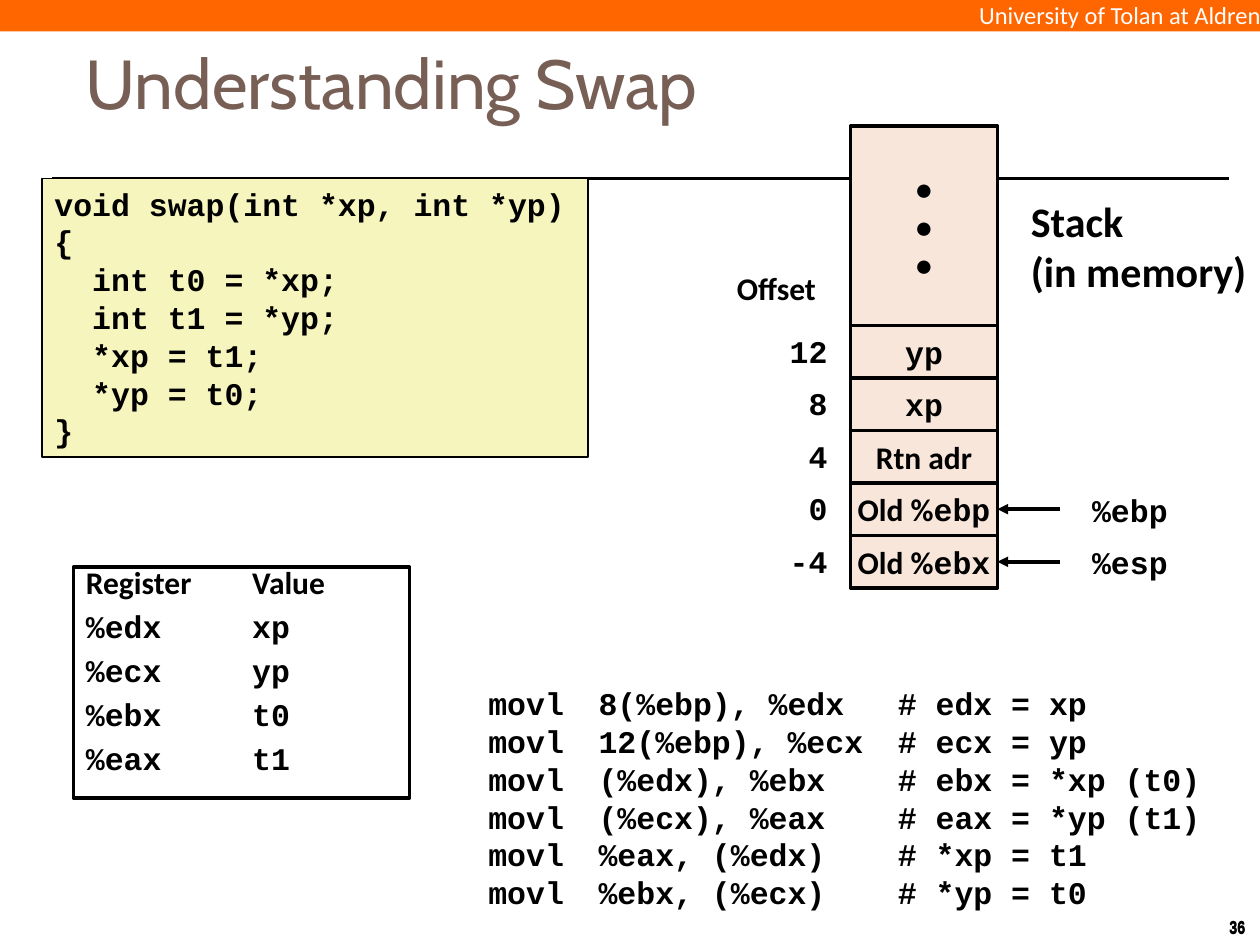
"""Build a slide that explains a swap function with its stack and registers."""
import dataclasses

import lxml.etree
import pptx
import pptx.dml.color
import pptx.enum.shapes
import pptx.enum.text
import pptx.oxml.ns
import pptx.util

Pt = pptx.util.Pt
qn = pptx.oxml.ns.qn
Align = pptx.enum.text.PP_ALIGN
Anchor = pptx.enum.text.MSO_ANCHOR


@dataclasses.dataclass(frozen=True)
class Theme:
    """Colours, faces and type sizes."""
    ink: str = "000000"
    paper: str = "FFFFFF"
    banner: str = "FF6600"
    title: str = "775F55"
    code: str = "F6F5BD"
    cell: str = "F8E6DA"
    sans: str = "Calibri"
    mono: str = "Courier New"
    head: str = "Cabin"
    narrow: str = "Arial Narrow"
    huge: float = 39.6
    large: float = 24
    body: float = 18
    small: float = 14
    tiny: float = 10


def rgb(color):
    """Turn a hex string into a colour."""
    return pptx.dml.color.RGBColor.from_string(color)


class Slide:
    """Draws styled elements on one slide."""

    def __init__(self, slide, theme):
        """Keep the slide and its theme."""
        self.shapes = slide.shapes
        self.theme = theme

    def label(self, shape, lines, face=None, size=None, color=None, bold=True,
              align=Align.LEFT, anchor=Anchor.TOP, wrap=False, tabs=(),
              indent=0, spacing=None, gap=0):
        """Fill a shape with paragraphs in one style."""
        frame = shape.text_frame
        frame.word_wrap = wrap
        frame.vertical_anchor = anchor
        for index, line in enumerate(lines):
            para = frame.add_paragraph() if index else frame.paragraphs[0]
            para.text = line.lstrip(" ")
            para.alignment = align
            props = para._p.get_or_add_pPr()
            if line.startswith(" "):
                props.set("marL", str(Pt(indent)))
            if spacing:
                para.line_spacing = spacing
            if gap and index:
                para.space_before = Pt(gap)
            if tabs:
                stops = lxml.etree.SubElement(props, qn("a:tabLst"))
                for stop in tabs:
                    lxml.etree.SubElement(stops, qn("a:tab"), pos=str(Pt(stop)), algn="l")
            font = para.font
            font.name = face or self.theme.mono
            font.size = Pt(size or self.theme.body)
            font.bold = bold
            font.color.rgb = rgb(color or self.theme.ink)
        return shape

    def text(self, box, lines, **style):
        """Add a text box."""
        return self.label(self.shapes.add_textbox(*map(Pt, box)), lines, **style)

    def rect(self, box, lines, fill=None, width=0, **style):
        """Add a rectangle with text."""
        kind = pptx.enum.shapes.MSO_SHAPE.RECTANGLE
        shape = self.shapes.add_shape(kind, *map(Pt, box))
        shape.shadow.inherit = False
        if fill:
            shape.fill.solid()
            shape.fill.fore_color.rgb = rgb(fill)
        else:
            shape.fill.background()
        if width:
            shape.line.color.rgb = rgb(self.theme.ink)
            shape.line.width = Pt(width)
        else:
            shape.line.fill.background()
        return self.label(shape, lines, **style)

    def cell(self, top, height, lines, face):
        """Add one stack cell."""
        return self.rect((486, top, 84, height), lines, self.theme.cell, 2,
                         face=face, align=Align.CENTER, anchor=Anchor.MIDDLE)

    def line(self, start, end, width, target=None):
        """Add a line, with an arrowhead when it has a target."""
        kind = pptx.enum.shapes.MSO_CONNECTOR.STRAIGHT
        line = self.shapes.add_connector(kind, *map(Pt, start + end))
        line.line.color.rgb = rgb(self.theme.ink)
        line.line.width = Pt(width)
        if target is not None:
            line.end_connect(target, 3)
            outline = line._element.spPr.find(qn("a:ln"))
            lxml.etree.SubElement(outline, qn("a:tailEnd"), type="triangle")
        lxml.etree.SubElement(line._element.spPr, qn("a:effectLst"))


def frame(page):
    """Draw the banner, title, rule and page number."""
    theme = page.theme
    banner = page.rect((0, 0, 720.5, 18), ["University of Tolan at Aldren"], theme.banner,
                       face=theme.sans, size=theme.small, color=theme.paper,
                       bold=False, align=Align.RIGHT)
    box = banner.text_frame
    box.margin_left = box.margin_right = box.margin_top = box.margin_bottom = 0
    page.line((30, 102), (702, 102), 1.5)
    for top in (520.5, 520):
        page.text((695.5, top, 24.5, 19.5), ["36"], face=theme.narrow, size=theme.tiny)
    page.text((42, 24, 502, 45), ["Understanding Swap"], face=theme.head,
              size=theme.huge, color=theme.title, bold=False,
              anchor=Anchor.MIDDLE, wrap=True)


def stack(page):
    """Draw the stack, its offsets and its pointers."""
    theme = page.theme
    page.text((582, 108, 139, 65.5), ["Stack", "(in memory)"], face=theme.sans, size=theme.large)
    page.text((414, 150, 60.5, 29), ["Offset"], face=theme.sans)
    page.cell(72, 114, ["•"] * 3, theme.sans)
    rows = [
        ("12", "yp", "", ""),
        ("8", "xp", "", ""),
        ("4", "", "Rtn adr", ""),
        ("0", "ebp", "Old %", "%ebp"),
        ("-4", "ebx", "Old %", "%esp"),
    ]
    step = 30
    for index, (offset, name, label, pointer) in enumerate(rows):
        top = 186 + index * step
        cell = page.cell(top, step, [label or name], theme.sans if label else theme.mono)
        if label and name:
            run = cell.text_frame.paragraphs[0].add_run()
            run.text = name
            run.font.name = theme.mono
        page.text((444, top, 36, 29), [offset], align=Align.RIGHT)
        if pointer:
            mid = top + step / 2
            page.line((606, mid), (570, mid), 2, cell)
            page.text((617, top + 1, 58, 29), [pointer])


def code(page):
    """Draw the source, the registers and the assembly."""
    theme = page.theme
    page.rect((24, 102, 312, 159), [
        "void swap(int *xp, int *yp)", "{", " int t0 = *xp;", " int t1 = *yp;",
        " *xp = t1;", " *yp = t0;", "}",
    ], theme.code, 1, wrap=True, indent=21.6)
    table = page.rect((42, 324, 192, 132), [
        "Register\tValue", "%edx\txp", "%ecx\typ", "%ebx\tt0", "%eax\tt1",
    ], width=2, wrap=True, tabs=(95,), spacing=0.7, gap=10)
    table.text_frame.paragraphs[0].font.name = theme.sans
    steps = [
        ("8(%ebp), %edx", "edx = xp"),
        ("12(%ebp), %ecx", "ecx = yp"),
        ("(%edx), %ebx", "ebx = *xp (t0)"),
        ("(%ecx), %eax", "eax = *yp (t1)"),
        ("%eax, (%edx)", "*xp = t1"),
        ("%ebx, (%ecx)", "*yp = t0"),
    ]
    page.text((240.5, 387.5, 468, 138), [f"\tmovl\t{args}\t# {note}" for args, note in steps],
              wrap=True, tabs=(31.5, 94.5, 265.5))


def main():
    """Build and save the deck."""
    deck = pptx.Presentation()
    deck.slide_width, deck.slide_height = Pt(720), Pt(540)
    page = Slide(deck.slides.add_slide(deck.slide_layouts[6]), Theme())
    frame(page)
    code(page)
    stack(page)
    deck.save("out.pptx")


if __name__ == "__main__":
    main()
